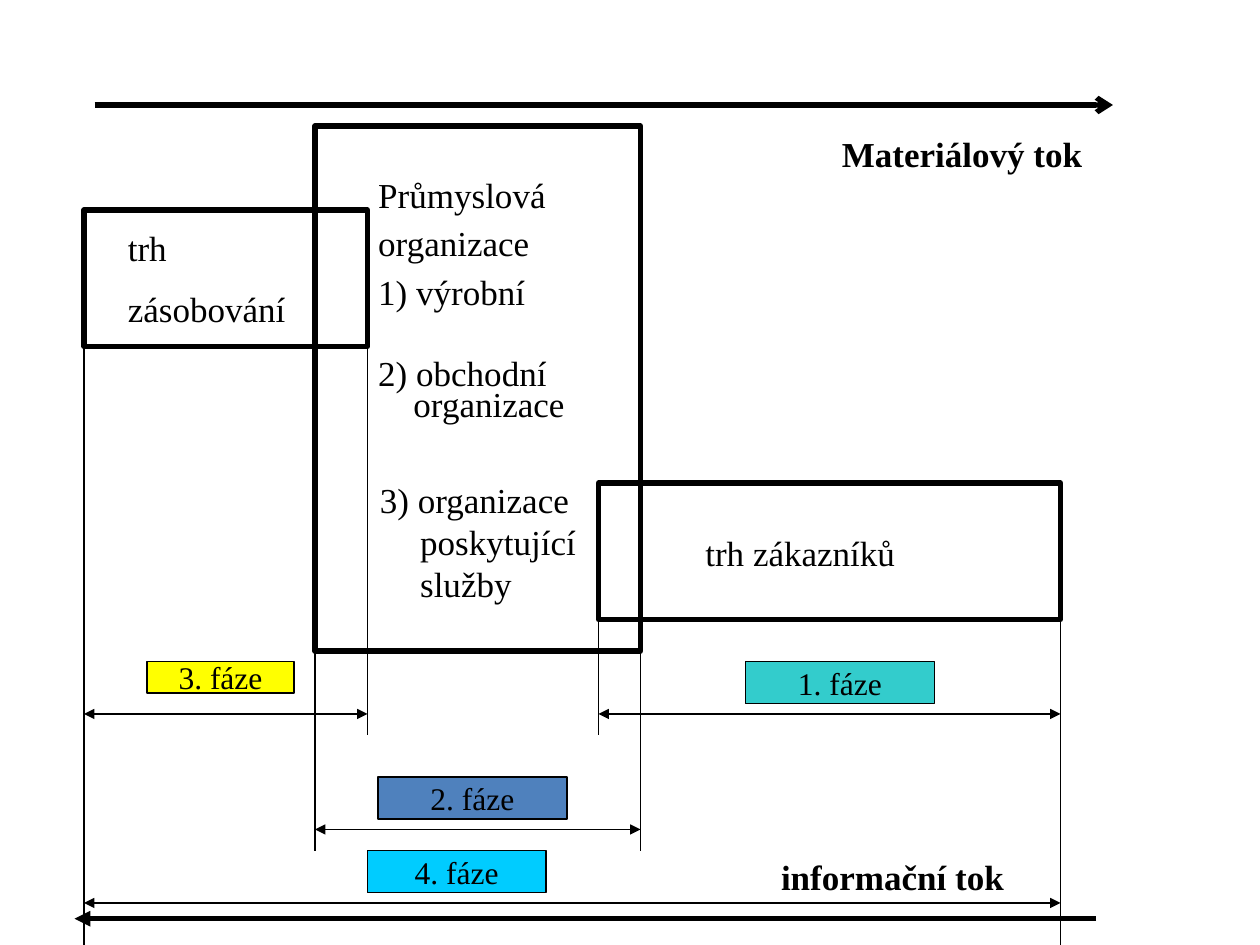
from dataclasses import dataclass

from lxml import etree
from pptx import Presentation
from pptx.dml.color import RGBColor
from pptx.enum.shapes import MSO_CONNECTOR, MSO_SHAPE
from pptx.enum.text import MSO_ANCHOR, MSO_AUTO_SIZE, PP_ALIGN
from pptx.oxml.ns import qn
from pptx.slide import Slide
from pptx.util import Inches, Pt

RECTANGLE = MSO_SHAPE.RECTANGLE
BUTTON = MSO_SHAPE.ACTION_BUTTON_CUSTOM
STRAIGHT = MSO_CONNECTOR.STRAIGHT
MIDDLE = MSO_ANCHOR.MIDDLE
FIT_SHAPE = MSO_AUTO_SIZE.SHAPE_TO_FIT_TEXT
CENTER = PP_ALIGN.CENTER

SLIDE_WIDTH, SLIDE_HEIGHT = Inches(10), Inches(7.5)
COLUMNS, ROWS = 120, 90
FONT = "Times New Roman"
BLACK = "000000"
THIN, THICK = 0.75, 3


@dataclass(frozen=True)
class Area:
    column: float
    row: float
    columns: float
    rows: float


@dataclass(frozen=True)
class Line:
    start_column: float
    start_row: float
    end_column: float
    end_row: float
    width: float = THIN
    head: str = "none"
    tail: str = "none"


@dataclass(frozen=True)
class Phase:
    text: str
    area: Area
    fill: str


@dataclass(frozen=True)
class TextLine:
    text: str
    space_before: float = 0
    spacing: float = 1.0
    margin: float = 0
    indent: float = 0


@dataclass(frozen=True)
class Caption:
    area: Area
    lines: tuple[TextLine, ...]
    bold: bool = False


FRAMES = (Area(30, 12, 31, 50), Area(8, 20, 27, 13), Area(57, 46, 44, 13))

BOUNDARIES = (
    Line(8, 33, 8, 90),
    Line(101, 59, 101, 90),
    Line(35, 33, 35, 70),
    Line(57, 59, 57, 70),
    Line(30, 62, 30, 81),
    Line(61, 62, 61, 81),
)

SPANS = tuple(
    Line(left, row, right, row, head="triangle", tail="triangle")
    for left, right, row in ((8, 101, 86), (8, 35, 68), (30, 61, 79), (57, 101, 68))
)

FLOWS = (
    Line(9, 10, 106, 10, THICK, tail="arrow"),
    Line(104.4, 87.5, 7.1, 87.5, THICK, tail="triangle"),
)

PHASES = (
    Phase("3. fáze", Area(14, 63, 14, 3), "FFFF00"),
    Phase("4. fáze", Area(35, 81, 17, 4), "00CCFF"),
    Phase("2. fáze", Area(36, 74, 18, 4), "4F81BD"),
    Phase("1. fáze", Area(71, 63, 18, 4), "33CCCC"),
)

CAPTIONS = (
    Caption(Area(11, 21, 19, 11.25), (TextLine("trh"), TextLine("zásobování", 11))),
    Caption(
        Area(34, 17, 24, 25),
        (
            TextLine("Průmyslová", spacing=0.7, margin=0.07),
            TextLine("organizace", 11, 0.7, 0.07),
            TextLine("1) výrobní", 11, 0.7, 0.07),
            TextLine("2) obchodní", 29.5, 0.7, 0.07),
            TextLine("organizace", 1, 0.7, 0.35),
        ),
    ),
    Caption(
        Area(35, 45, 24, 13.25),
        (TextLine("3) organizace poskytující služby", margin=0.32, indent=-0.32),),
    ),
    Caption(Area(66, 50, 30, 5.2), (TextLine("trh zákazníků"),)),
    Caption(Area(79, 12, 30, 5.2), (TextLine("Materiálový tok"),), True),
    Caption(Area(73.2, 80.9, 24.6, 5.2), (TextLine("informační tok"),), True),
)


def color(value: str) -> RGBColor:
    """Turn a hex string into a colour."""
    return RGBColor.from_string(value)


def across(columns: float) -> int:
    """Turn grid columns into a length."""
    return round(SLIDE_WIDTH * columns / COLUMNS)


def down(rows: float) -> int:
    """Turn grid rows into a length."""
    return round(SLIDE_HEIGHT * rows / ROWS)


def place(area: Area) -> tuple[int, int, int, int]:
    """Return left, top, width and height of a grid area."""
    return across(area.column), down(area.row), across(area.columns), down(area.rows)


def format_runs(paragraph, size: float, bold: bool = False) -> None:
    """Give every run of a paragraph the slide's font."""
    for run in paragraph.runs:
        run.font.name = FONT
        run.font.size = Pt(size)
        run.font.bold = bold
        run.font.color.rgb = color(BLACK)


def draw_box(slide: Slide, kind: MSO_SHAPE, area: Area, width: float):
    """Draw an unfilled shape with a black outline."""
    shape = slide.shapes.add_shape(kind, *place(area))
    shape.shadow.inherit = False
    shape.fill.background()
    shape.line.color.rgb = color(BLACK)
    shape.line.width = Pt(width)
    return shape


def draw_phase(slide: Slide, phase: Phase) -> None:
    """Draw a coloured phase label."""
    shape = draw_box(slide, BUTTON, phase.area, THIN)
    shape.fill.solid()
    shape.fill.fore_color.rgb = color(phase.fill)
    frame = shape.text_frame
    frame.word_wrap = False
    frame.vertical_anchor = MIDDLE
    frame.text = phase.text
    paragraph = frame.paragraphs[0]
    paragraph.alignment = CENTER
    format_runs(paragraph, 18)


def draw_line(slide: Slide, line: Line) -> None:
    """Draw a black line with its arrowheads."""
    connector = slide.shapes.add_connector(
        STRAIGHT, across(line.start_column), down(line.start_row),
        across(line.end_column), down(line.end_row),
    )
    connector.line.color.rgb = color(BLACK)
    connector.line.width = Pt(line.width)
    properties = connector._element.spPr
    outline = properties.find(qn("a:ln"))
    for tag, kind in (("a:headEnd", line.head), ("a:tailEnd", line.tail)):
        etree.SubElement(outline, qn(tag), type=kind)
    etree.SubElement(properties, qn("a:effectLst"))


def draw_caption(slide: Slide, caption: Caption) -> None:
    """Draw a text box with its paragraphs."""
    frame = slide.shapes.add_textbox(*place(caption.area)).text_frame
    frame.word_wrap = True
    frame.auto_size = FIT_SHAPE
    frame.text = "\n".join(line.text for line in caption.lines)
    for paragraph, line in zip(frame.paragraphs, caption.lines):
        properties = paragraph._p.get_or_add_pPr()
        properties.set("marL", str(Inches(line.margin)))
        properties.set("indent", str(Inches(line.indent)))
        paragraph.line_spacing = line.spacing
        paragraph.space_before = Pt(line.space_before)
        format_runs(paragraph, 20, caption.bold)


def main() -> None:
    """Build the slide and save it."""
    presentation = Presentation()
    presentation.slide_width, presentation.slide_height = SLIDE_WIDTH, SLIDE_HEIGHT
    slide = presentation.slides.add_slide(presentation.slide_layouts[6])
    for area in FRAMES:
        draw_box(slide, RECTANGLE, area, THICK)
    for line in BOUNDARIES + SPANS + FLOWS:
        draw_line(slide, line)
    for phase in PHASES:
        draw_phase(slide, phase)
    for caption in CAPTIONS:
        draw_caption(slide, caption)
    presentation.save("out.pptx")


if __name__ == "__main__":
    main()
